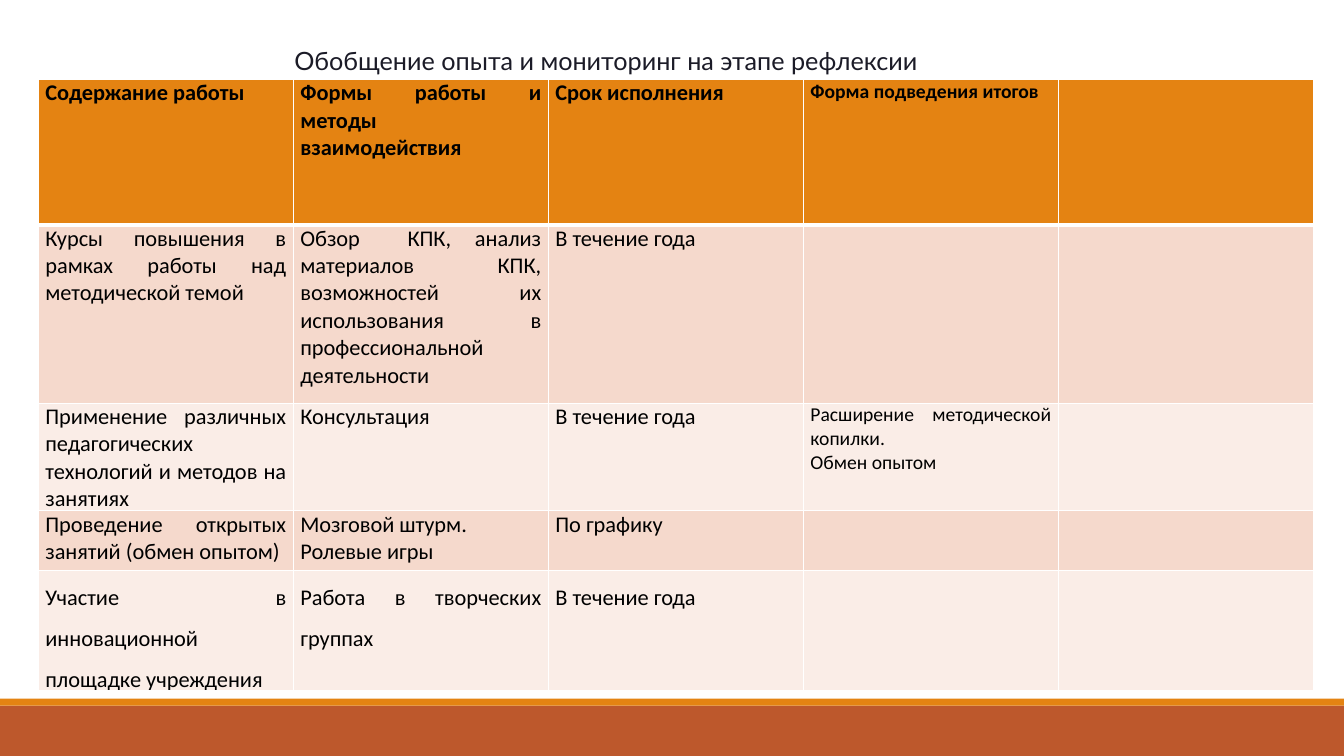
from lxml import etree
from pptx import Presentation
from pptx.dml.color import RGBColor
from pptx.enum import shapes, text
from pptx.oxml import ns
from pptx.util import Pt

WHITE = RGBColor(0xFF, 0xFF, 0xFF)
BLACK = RGBColor(0, 0, 0)
INK = RGBColor(0x1B, 0x1B, 0x27)
ORANGE = RGBColor(0xE4, 0x83, 0x12)
RUST = RGBColor(0xBD, 0x58, 0x2C)
PEACH = RGBColor(0xF5, 0xD9, 0xCC)
PALE = RGBColor(0xFA, 0xED, 0xE7)

SLIDE_W, SLIDE_H = 960, 540
TITLE = "Обобщение опыта и мониторинг на этапе рефлексии"
PLAN = [
    ["Содержание работы", "Формы работы и методы взаимодействия",
     "Срок исполнения", "Форма подведения итогов", ""],
    ["Курсы повышения в рамках работы над методической темой",
     "Обзор  КПК, анализ материалов КПК, возможностей их использования "
     "в профессиональной деятельности", "В течение года", "", ""],
    ["Применение  различных педагогических технологий и методов на занятиях",
     "Консультация", "В течение года",
     "Расширение методической копилки.\nОбмен опытом", ""],
    ["Проведение открытых занятий (обмен опытом)",
     "Мозговой штурм.\nРолевые игры", "По графику", "", ""],
    ["Участие в инновационной площадке учреждения",
     "Работа в творческих группах", "В течение года", "", ""],
]
ROW_HEIGHTS = [103.68, 127.44, 64.08, 42.48, 60.48]
RESULT_COLUMN = 3


def add_footer(slide, left, top, width, height):
    stripe_height = 5
    bands = [(top + stripe_height, height - stripe_height, RUST),
             (top, stripe_height, ORANGE)]
    for band_top, band_height, color in bands:
        band = slide.shapes.add_shape(
            shapes.MSO_SHAPE.RECTANGLE,
            Pt(left), Pt(band_top), Pt(width), Pt(band_height))
        band.shadow.inherit = False
        band.fill.solid()
        band.fill.fore_color.rgb = color
        band.line.fill.background()


def place_title(slide, left, top, width, height):
    title = slide.shapes.title
    title.left, title.top = Pt(left), Pt(top)
    title.width, title.height = Pt(width), Pt(height)
    frame = title.text_frame
    frame.text = TITLE
    frame.word_wrap = False
    frame.auto_size = text.MSO_AUTO_SIZE.SHAPE_TO_FIT_TEXT
    frame.vertical_anchor = text.MSO_ANCHOR.TOP
    heading = frame.paragraphs[0]
    heading.alignment = text.PP_ALIGN.LEFT
    heading.line_spacing = Pt(43)
    heading.space_before = Pt(0)
    heading.font.name = "Lato"
    heading.font.size = Pt(18)
    heading.font.color.rgb = INK


def set_borders(cell, bottom_width):
    """Draw white borders; call before the fill, which must follow them."""
    properties = cell._tc.get_or_add_tcPr()
    for side, width in (("L", 1), ("R", 1), ("T", 1), ("B", bottom_width)):
        line = etree.SubElement(properties, ns.qn(f"a:ln{side}"), w=str(Pt(width)))
        fill = etree.SubElement(line, ns.qn("a:solidFill"))
        etree.SubElement(fill, ns.qn("a:srgbClr"), val=str(WHITE))


def format_cell(cell, row, column):
    is_header = row == 0
    # The top border of the first body row matches the header's heavy rule.
    set_borders(cell, 3 if is_header else 1)
    cell.fill.solid()
    cell.fill.fore_color.rgb = ORANGE if is_header else PEACH if row % 2 else PALE
    cell.margin_left = cell.margin_right = Pt(5)
    cell.margin_top = cell.margin_bottom = Pt(0)
    cell.text = PLAN[row][column]
    for paragraph in cell.text_frame.paragraphs:
        paragraph.alignment = text.PP_ALIGN.JUSTIFY
        paragraph.font.name = "Calibri"
        paragraph.font.size = Pt(14 if column == RESULT_COLUMN else 16)
        paragraph.font.bold = is_header
        paragraph.font.color.rgb = BLACK
        if row == len(PLAN) - 1:
            paragraph.line_spacing = 1.5


def add_plan(slide, left, top, width):
    plan = slide.shapes.add_table(
        len(PLAN), len(PLAN[0]),
        Pt(left), Pt(top), Pt(width), Pt(sum(ROW_HEIGHTS))).table
    for column in plan.columns:
        column.width = Pt(width / len(PLAN[0]))
    for row, height in enumerate(ROW_HEIGHTS):
        plan.rows[row].height = Pt(height)
        for column in range(len(PLAN[0])):
            format_cell(plan.cell(row, column), row, column)


def main():
    deck = Presentation()
    deck.slide_width, deck.slide_height = Pt(SLIDE_W), Pt(SLIDE_H)
    slide = deck.slides.add_slide(deck.slide_layouts[5])
    add_footer(slide, 0, 499, SLIDE_W, SLIDE_H - 499)
    place_title(slide, 203, 7.2, 464.4, 50.4)
    add_plan(slide, 27.4, 56.9, 910.8)
    deck.save("out.pptx")


if __name__ == "__main__":
    main()
